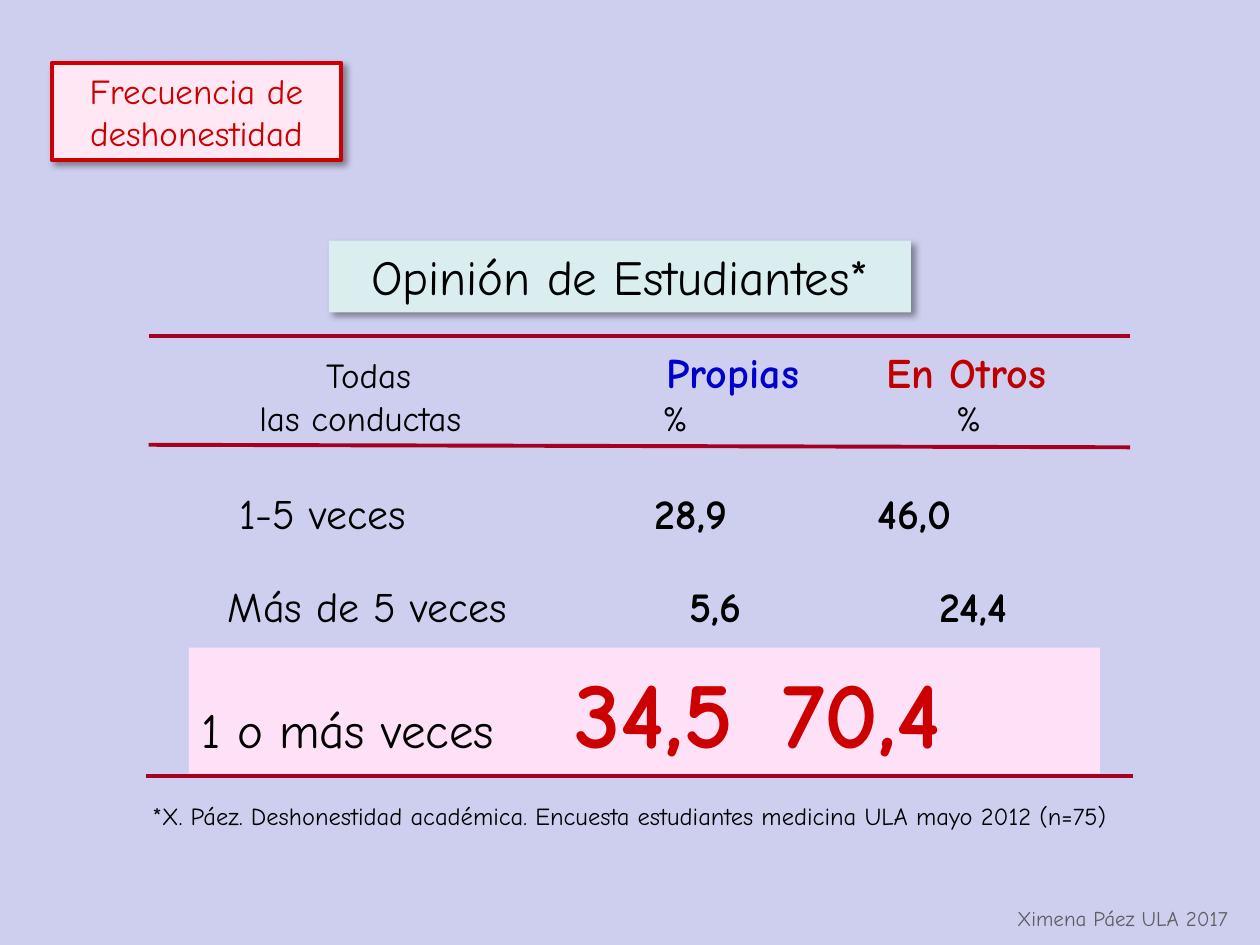
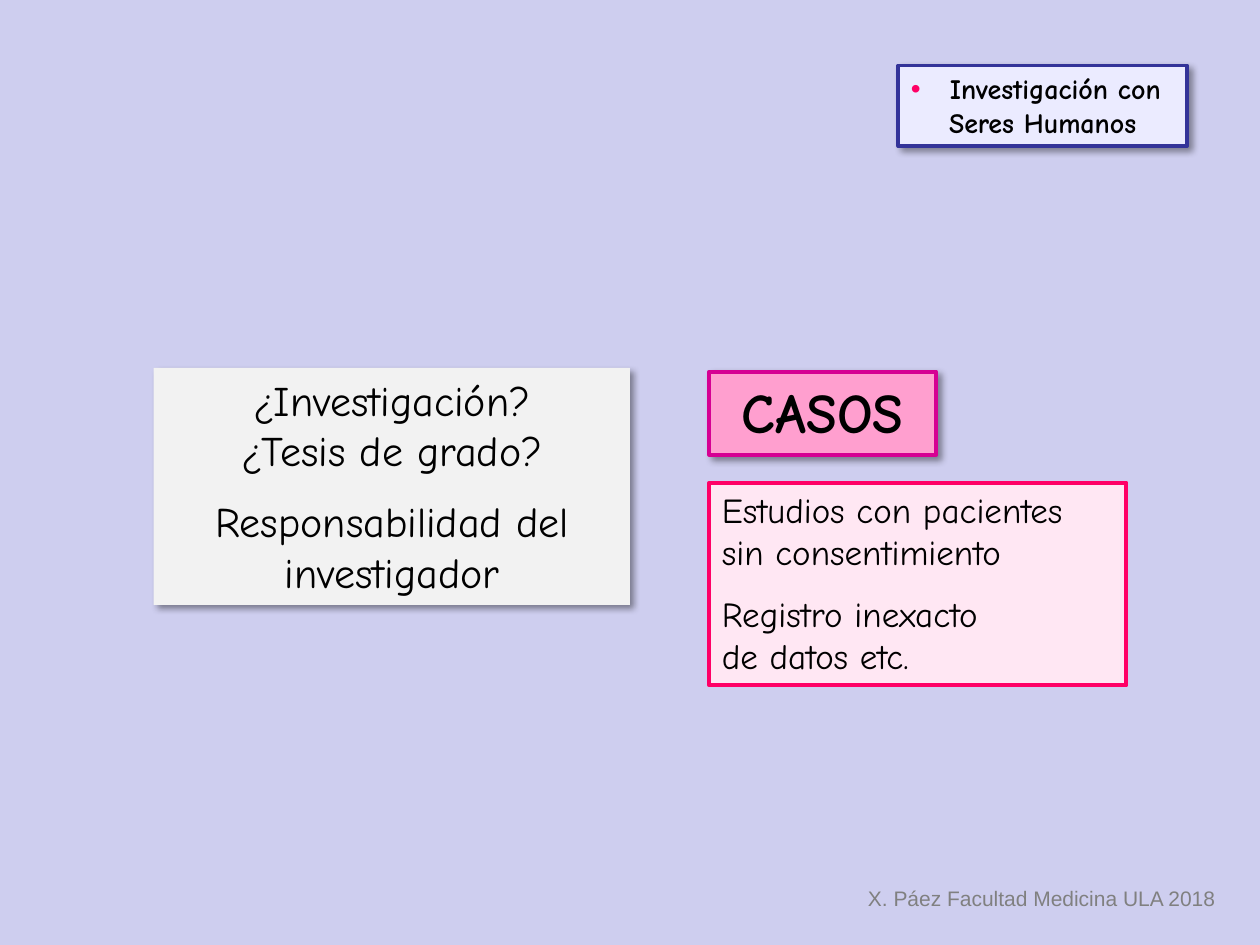
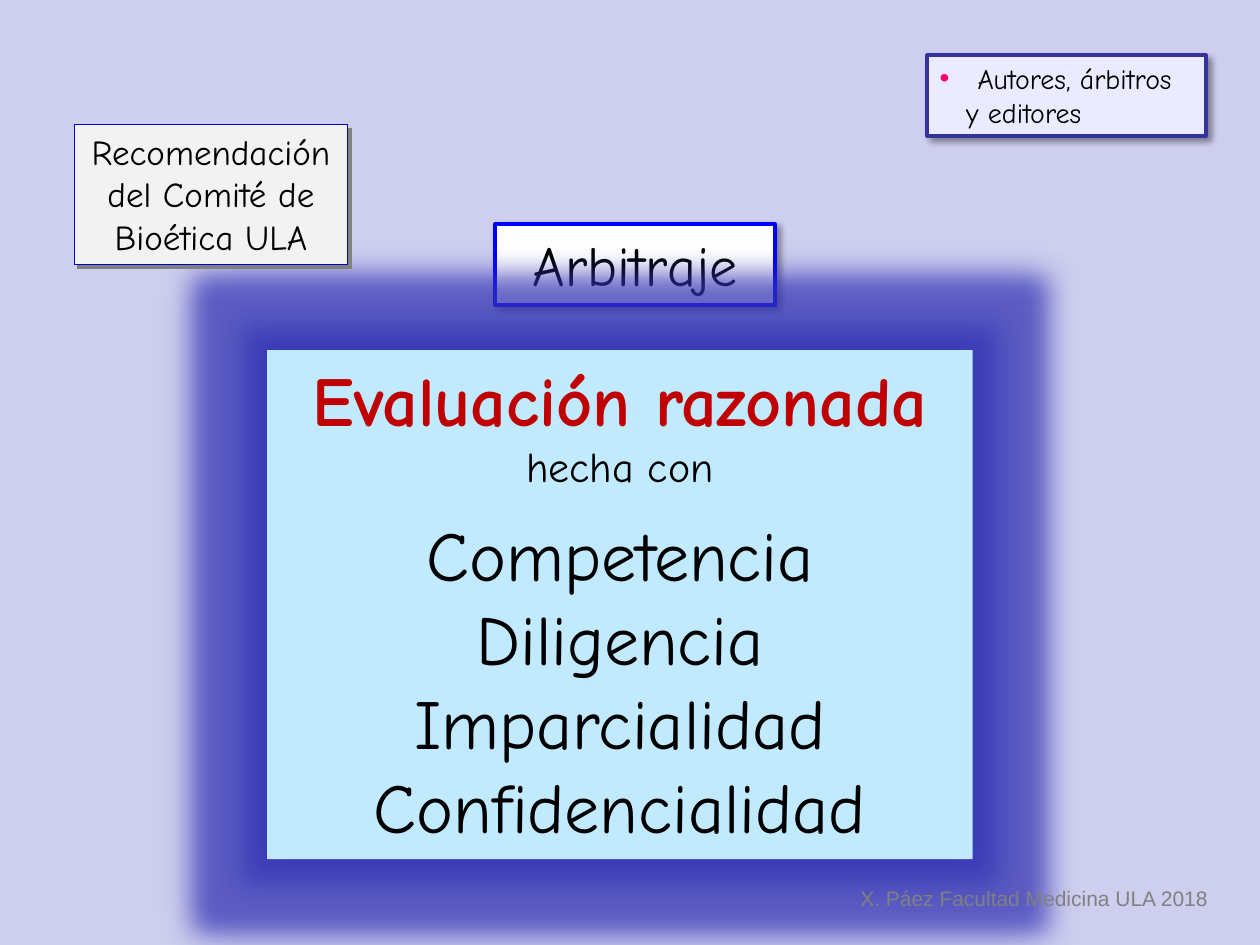
"""Builds three slides on academic honesty: survey, human research and peer review."""
from lxml import etree
from pptx import Presentation, util as u
from pptx.dml.color import RGBColor
from pptx.enum import shapes, text
from pptx.oxml import ns

BACKGROUND, BLACK, RED, DARK_RED, RULE = "CECEEF", "000000", "CC0000", "C00000", "A50021"
PALE_PINK, PALE_BLUE, NAVY, GREY, MAGENTA = "FFE7F3", "EBEBFF", "333399", "F2F2F2", "FF0066"
SOFT_SHADOW = (BLACK, 40, 4, 3)
CENTER, LEFT = text.PP_ALIGN.CENTER, text.PP_ALIGN.LEFT
rgb = RGBColor.from_string


def add_effect(parent, tag, color, alpha, **sizes):
    """Append a coloured effect whose sizes are given in points."""
    effect = etree.SubElement(parent, ns.qn(tag))
    for key, points in sizes.items():
        effect.set(key, str(u.Pt(points)))
    if tag == "a:outerShdw":
        effect.set("dir", "2700000")
    tint = etree.SubElement(effect, ns.qn("a:srgbClr"), val=color)
    etree.SubElement(tint, ns.qn("a:alpha"), val=str(alpha * 1000))


def add_box(slide, at, lines, size, color=BLACK, bold=False, font="Comic Neue", align=CENTER, wrap=True,
            fill=None, line=None, shadow=None, glow=None, gap_before=None, tabs=(), bullet=None):
    """Add a text box or filled panel; a line is a string or a list of (text, size, colour, bold)."""
    place = [u.Inches(n) for n in at]
    if fill:
        box = slide.shapes.add_shape(shapes.MSO_SHAPE.RECTANGLE, *place)
        box.fill.solid()
        box.fill.fore_color.rgb = rgb(fill)
        if line:
            box.line.color.rgb, box.line.width = rgb(line[0]), u.Pt(line[1])
        else:
            box.line.fill.background()
        box.shadow.inherit = False
        effects = box._element.spPr.find(ns.qn("a:effectLst"))
        if glow:
            add_effect(effects, "a:glow", glow[0], glow[1], rad=glow[2])
        if shadow:
            add_effect(effects, "a:outerShdw", shadow[0], shadow[1], blurRad=shadow[2], dist=shadow[3])
    else:
        box = slide.shapes.add_textbox(*place)
    frame = box.text_frame
    frame.word_wrap = wrap
    frame.auto_size = text.MSO_AUTO_SIZE.SHAPE_TO_FIT_TEXT
    frame.vertical_anchor = text.MSO_ANCHOR.TOP
    for i, content in enumerate(lines):
        paragraph = frame.paragraphs[0] if i == 0 else frame.add_paragraph()
        paragraph.alignment = align
        props = paragraph._p.get_or_add_pPr()
        if bullet and i == 0:
            paragraph.alignment = LEFT
            props.set("marL", str(u.Inches(bullet)))
            props.set("indent", str(-u.Inches(bullet)))
            bullet_color = etree.SubElement(props, ns.qn("a:buClr"))
            etree.SubElement(bullet_color, ns.qn("a:srgbClr"), val=MAGENTA)
            etree.SubElement(props, ns.qn("a:buFont"), typeface="Arial")
            etree.SubElement(props, ns.qn("a:buChar"), char="•")
        if tabs:
            stops = etree.SubElement(props, ns.qn("a:tabLst"))
            for stop in tabs[i]:
                etree.SubElement(stops, ns.qn("a:tab"), pos=str(u.Inches(stop)), algn="l")
        if gap_before and i == gap_before[0]:
            paragraph.space_before = u.Pt(gap_before[1])
        paragraph.font.name = font
        if isinstance(content, str):
            paragraph.add_run().text = content
            paragraph.font.size, paragraph.font.bold = u.Pt(size), bold
            paragraph.font.color.rgb = rgb(color)
        else:
            for words, run_size, run_color, run_bold in content:
                run = paragraph.add_run()
                run.text = words
                run.font.size, run.font.bold = u.Pt(run_size), run_bold
                run.font.color.rgb = rgb(run_color)
    return frame


prs = Presentation()
prs.slide_width, prs.slide_height = u.Inches(10), u.Inches(7.5)
survey, research, review = [prs.slides.add_slide(prs.slide_layouts[6]) for _ in range(3)]
for slide in (survey, research, review):
    slide.background.fill.solid()
    slide.background.fill.fore_color.rgb = rgb(BACKGROUND)

add_box(survey, (1.56, 2.7, 7.21, 0.84), [
    [("\tTodas\t", 20, BLACK, False), ("Propias\t", 24, "0000CC", True), ("En Otros", 24, DARK_RED, True)],
    "\tlas conductas\t%\t%"], 20, align=LEFT, tabs=[(0.93, 3.63, 5.38), (0.4, 3.6, 5.93)])
for at, label, values, stops in [
        ((1.79, 3.82, 6.64, 0.51), "1-5 veces", "28,9\t46,0", (0.01, 3.31, 5.08)),
        ((1.53, 4.56, 6.88, 0.5), "Más de 5 veces", "5,6\t24,4", (0.18, 3.84, 5.83))]:
    add_box(survey, at, [[(f"\t{label}\t", 24, BLACK, False), (values, 24, BLACK, True)]], 24,
            align=LEFT, tabs=[stops])
for x1, y1, x2, y2 in [(1.18, 3.53, 8.97, 3.55), (1.16, 6.16, 8.99, 6.16), (1.18, 2.67, 8.97, 2.67)]:
    rule = survey.shapes.add_connector(shapes.MSO_CONNECTOR.STRAIGHT, *[u.Inches(n) for n in (x1, y1, x2, y2)])
    rule.line.color.rgb, rule.line.width = rgb(RULE), u.Pt(2.25)
    etree.SubElement(rule._element.spPr, ns.qn("a:effectLst"))
add_box(survey, (1.5, 5.14, 7.23, 1), [
    [("1 o más veces\t", 28, BLACK, False), ("34,5\t70,4", 54, RED, True)]], 54,
    align=LEFT, fill="FFE1F7", tabs=[(2.96, 4.61)])
add_box(survey, (2.61, 1.91, 4.62, 0.57), ["Opinión de Estudiantes*"], 28, wrap=False,
        fill="DAEDEF", shadow=SOFT_SHADOW)
add_box(survey, (0.78, 6.31, 8.44, 0.34),
        ["*X. Páez. Deshonestidad académica. Encuesta estudiantes medicina ULA mayo 2012 (n=75)"], 14, wrap=False)
add_box(survey, (7.91, 7.14, 2, 0.3), ["Ximena Páez ULA 2017"], 12, "5F5F5F", wrap=False)
add_box(survey, (0.41, 0.5, 2.3, 0.77), ["Frecuencia de", "deshonestidad"], 20, RED,
        fill=PALE_PINK, line=(RED, 2.25), shadow=SOFT_SHADOW)

add_box(research, (5.63, 3.83, 3.31, 1.61),
        ["Estudios con pacientes", "sin consentimiento", "Registro inexacto", "de datos etc."], 20,
        align=LEFT, fill=PALE_PINK, line=(MAGENTA, 2.25), gap_before=(2, 11))
add_box(research, (7.13, 0.52, 2.29, 0.64), ["Investigación con", "Seres Humanos"], 16, bold=True,
        fill=PALE_BLUE, line=(NAVY, 2.25), shadow=SOFT_SHADOW, bullet=0.31)
add_box(research, (5.63, 2.95, 1.8, 0.66), ["CASOS"], 32, bold=True, wrap=False,
        fill="FF9FCF", line=("D60093", 2.25), shadow=SOFT_SHADOW)
add_box(research, (1.22, 2.92, 3.78, 1.88),
        ["¿Investigación?", "¿Tesis de grado?", "Responsabilidad del investigador"], 24,
        fill=GREY, shadow=SOFT_SHADOW, gap_before=(2, 12))

add_box(review, (3.93, 1.78, 2.22, 0.64), ["Arbitraje"], 32, wrap=False,
        fill="FFFFFF", line=("0000FF", 2.25), shadow=SOFT_SHADOW)
add_box(review, (2.12, 2.78, 5.6, 4.04), [
    [("Evaluación razonada", 40, DARK_RED, True)], [("hecha con", 24, BLACK, False)],
    "Competencia", "Diligencia", "Imparcialidad", "Confidencialidad"], 40, wrap=False,
    fill="C1EAFF", shadow=("3333B4", 80, 14, 0), glow=("3333B4", 60, 28), gap_before=(2, 12))
add_box(review, (0.59, 0.99, 2.17, 1.11), ["Recomendación", "del Comité de", "Bioética ULA"], 20, wrap=False,
        fill=GREY, line=("0000CC", 0.75), shadow=("808080", 100, 0, 2.8))

for slide, left in ((research, 6.79), (review, 6.73)):
    add_box(slide, (left, 6.98, 3.06, 0.3), ["X. Páez Facultad Medicina ULA 2018"], 12, "808080",
            font="Arial", align=LEFT, wrap=False)

authors = add_box(review, (7.36, 0.44, 2.21, 0.64), ["Autores, árbitros", "y editores"], 16, align=LEFT,
                  fill=PALE_BLUE, line=(NAVY, 2.25), shadow=SOFT_SHADOW, bullet=0.3)
authors.paragraphs[1]._p.get_or_add_pPr().set("marL", str(u.Inches(0.21)))

prs.save("out.pptx")
